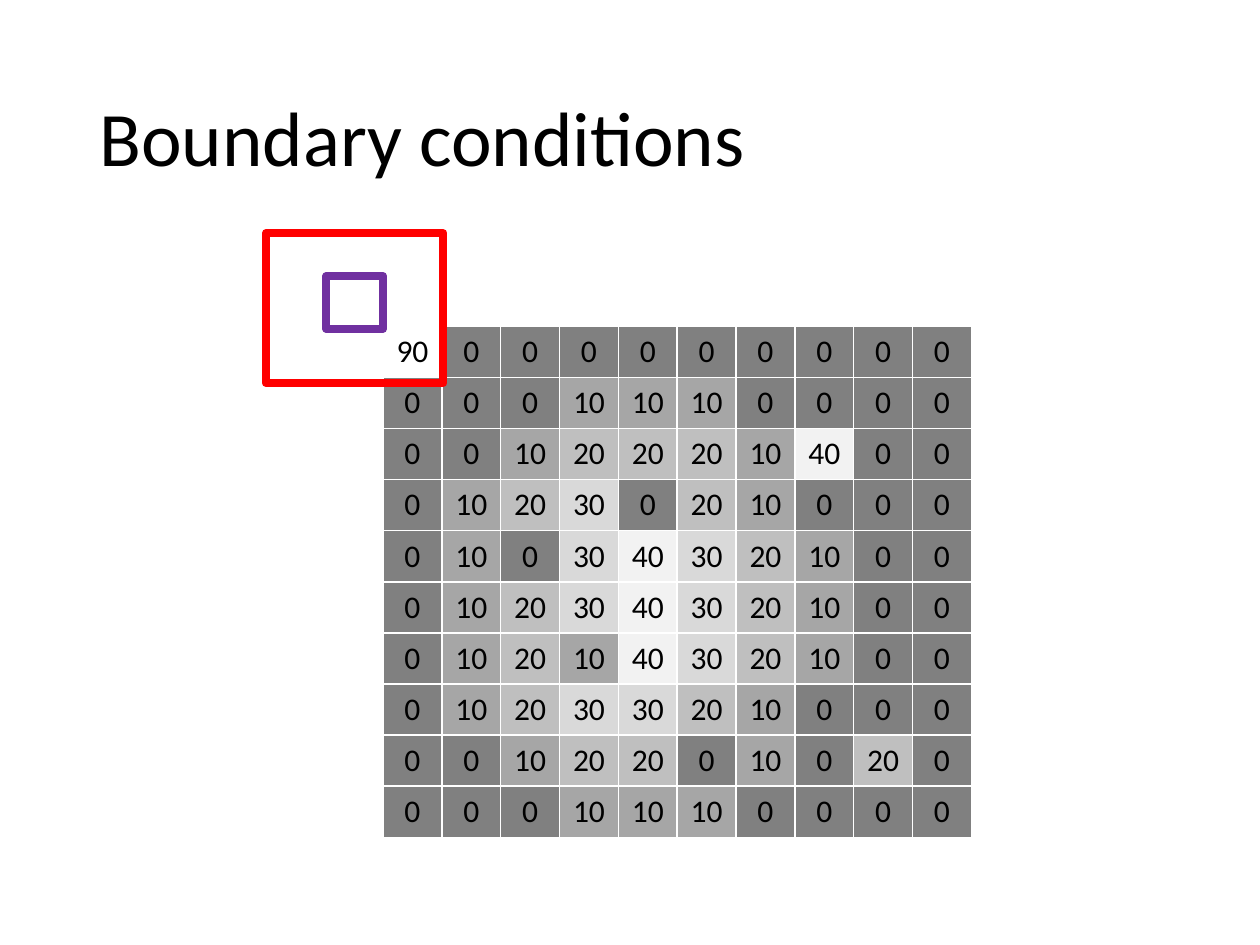
from lxml import etree
from pptx import Presentation
from pptx.dml.color import RGBColor
from pptx.enum.shapes import MSO_SHAPE
from pptx.enum.text import MSO_ANCHOR, PP_ALIGN
from pptx.oxml.ns import qn
from pptx.util import Inches, Pt

GREYS = {0: "808080", 10: "A6A6A6", 20: "BFBFBF", 30: "D9D9D9", 40: "F2F2F2", 90: "FFFFFF"}
PIXELS = [
    [90, 0, 0, 0, 0, 0, 0, 0, 0, 0],
    [0, 0, 0, 10, 10, 10, 0, 0, 0, 0],
    [0, 0, 10, 20, 20, 20, 10, 40, 0, 0],
    [0, 10, 20, 30, 0, 20, 10, 0, 0, 0],
    [0, 10, 0, 30, 40, 30, 20, 10, 0, 0],
    [0, 10, 20, 30, 40, 30, 20, 10, 0, 0],
    [0, 10, 20, 10, 40, 30, 20, 10, 0, 0],
    [0, 10, 20, 30, 30, 20, 10, 0, 0, 0],
    [0, 0, 10, 20, 20, 0, 10, 0, 20, 0],
    [0, 0, 0, 10, 10, 10, 0, 0, 0, 0],
]


def rgb(color):
    return RGBColor.from_string(color)


class SlideBuilder:
    """Holds the text style and the slide being filled."""

    font = {"name": "Calibri", "bold": False}
    text_color = "000000"

    def __init__(self, slide):
        self.slide = slide

    def add_text(self, tf, text, size, align):
        p = tf.paragraphs[0]
        p.alignment = align
        r = p.add_run()
        r.text = text
        for name, value in {**self.font, "size": Pt(size)}.items():
            setattr(r.font, name, value)
        r.font.color.rgb = rgb(self.text_color)
        return p

    def title(self, text, x, y, w, h):
        sp = self.slide.shapes.title
        place = {"left": x, "top": y, "width": w, "height": h}
        for name, value in place.items():
            setattr(sp, name, Inches(value))
        tf = sp.text_frame
        tf.word_wrap = True
        tf.vertical_anchor = MSO_ANCHOR.MIDDLE
        self.add_text(tf, text, 44, PP_ALIGN.LEFT).line_spacing = 0.9

    def borders(self, cell, color, width):
        tc_pr = cell._tc.get_or_add_tcPr()
        for index, side in enumerate(("lnL", "lnR", "lnT", "lnB")):
            ln = etree.Element(qn(f"a:{side}"), w=str(Pt(width)))
            fill = etree.SubElement(ln, qn("a:solidFill"))
            etree.SubElement(fill, qn("a:srgbClr"), val=color)
            tc_pr.insert(index, ln)

    def pixel_grid(self, pixels, x, y, w, h):
        """Adds a table whose cells are shaded by their values."""
        frame = self.slide.shapes.add_table(
            len(pixels), len(pixels[0]), Inches(x), Inches(y), Inches(w), Inches(h))
        table = frame.table
        for i, row in enumerate(pixels):
            for j, value in enumerate(row):
                cell = table.cell(i, j)
                self.add_text(cell.text_frame, str(value), 18, PP_ALIGN.CENTER)
                cell.fill.solid()
                cell.fill.fore_color.rgb = rgb(GREYS[value])
                self.borders(cell, "FFFFFF", 1)

    def outline(self, color, x, y, w, h):
        sp = self.slide.shapes.add_shape(
            MSO_SHAPE.RECTANGLE, Inches(x), Inches(y), Inches(w), Inches(h))
        sp.shadow.inherit = False
        sp.fill.background()
        sp.line.color.rgb = rgb(color)
        sp.line.width = Pt(4.5)


def main():
    prs = Presentation()
    prs.slide_width, prs.slide_height = Inches(10), Inches(7.5)
    s = SlideBuilder(prs.slides.add_slide(prs.slide_layouts[5]))
    s.title("Boundary conditions", 0.69, 0.4, 8.62, 1.45)
    s.pixel_grid(PIXELS, 3.04, 2.59, 4.67, 4)
    s.outline("7030A0", 2.59, 2.19, 0.45, 0.42)
    s.outline("FF0000", 2.11, 1.85, 1.41, 1.19)
    prs.save("out.pptx")


if __name__ == "__main__":
    main()
